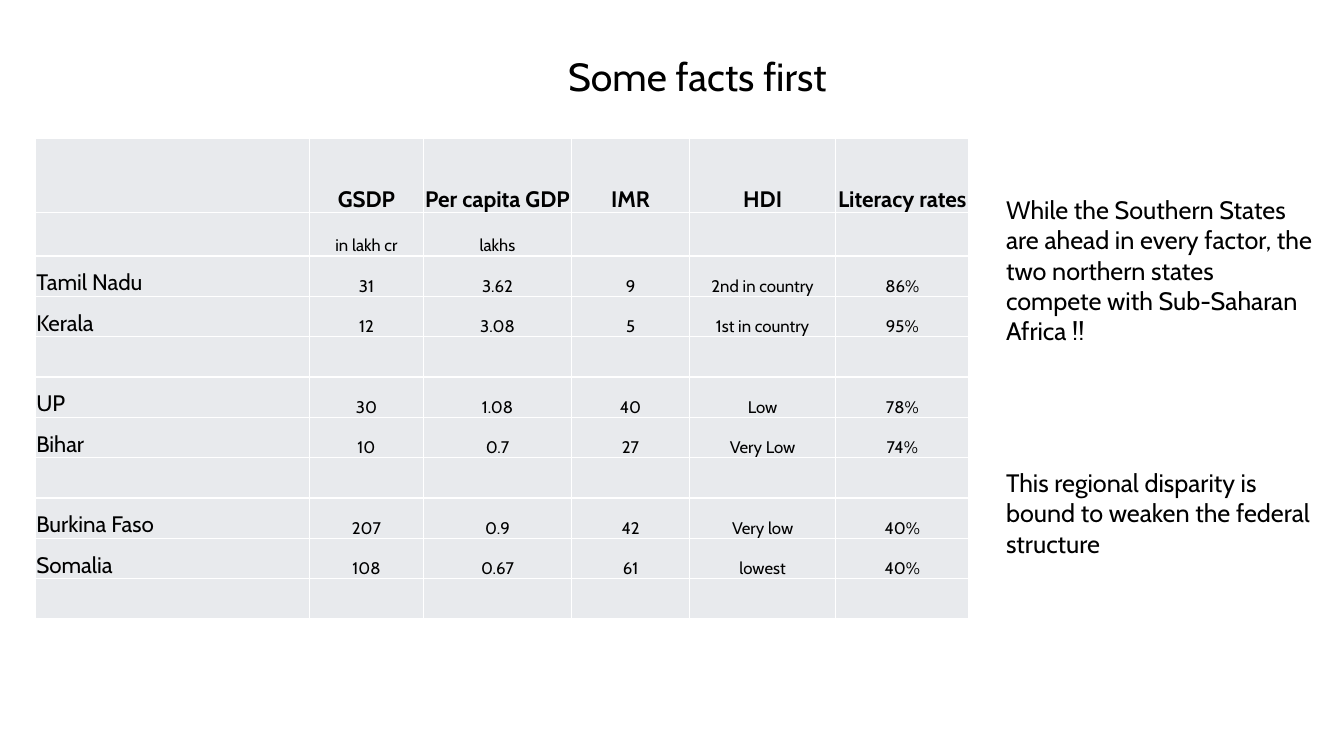
import pptx
import pptx.dml.color
import pptx.enum.text
import pptx.oxml
import pptx.oxml.ns
import pptx.util
from pptx.util import Inches

BLACK = pptx.dml.color.RGBColor(0x00, 0x00, 0x00)
WHITE = pptx.dml.color.RGBColor(0xFF, 0xFF, 0xFF)
PALE_GREY = pptx.dml.color.RGBColor(0xE8, 0xEA, 0xED)

ALIGN = pptx.enum.text.PP_ALIGN
ANCHOR = pptx.enum.text.MSO_ANCHOR

COLUMN_WIDTHS = [2.72, 1.13, 1.47, 1.17, 1.45, 1.32]
ROW_HEIGHTS = [0.74, 0.43] + [0.4] * 9
BLANK_ROW = [""] * 6
FACTS = [
    ["", "GSDP", "Per capita GDP", "IMR", "HDI", "Literacy rates"],
    ["", "in lakh cr", "lakhs", "", "", ""],
    ["Tamil Nadu", "31", "3.62", "9", "2nd in country", "86%"],
    ["Kerala", "12", "3.08", "5", "1st in country", "95%"],
    BLANK_ROW,
    ["UP", "30", "1.08", "40", "Low", "78%"],
    ["Bihar", "10", "0.7", "27", "Very Low", "74%"],
    BLANK_ROW,
    ["Burkina Faso", "207", "0.9", "42", "Very low", "40%"],
    ["Somalia", "108", "0.67", "61", "lowest", "40%"],
    BLANK_ROW,
]
REMARKS = [
    "While the Southern States are ahead in every factor, the two northern "
    "states compete with Sub-Saharan Africa !!",
    "This regional disparity is bound to weaken the federal structure",
]


class FactSlide:
    font_name = "Cabin"
    text_color = BLACK
    cell_color = PALE_GREY
    border_color = WHITE
    border_width = pptx.util.Pt(1)

    def __init__(self, slide):
        self.slide = slide

    def add_run(self, paragraph, text, size, bold=False):
        run = paragraph.add_run()
        run.text = text
        run.font.name = self.font_name
        run.font.size = pptx.util.Pt(size)
        run.font.bold = bold
        run.font.color.rgb = self.text_color

    def add_title(self, text, left, top, width, height):
        title = self.slide.shapes.title
        title.left, title.top = Inches(left), Inches(top)
        title.width, title.height = Inches(width), Inches(height)
        title.text_frame.word_wrap = True
        title.text_frame.auto_size = pptx.enum.text.MSO_AUTO_SIZE.NONE
        title.text_frame.vertical_anchor = ANCHOR.TOP
        paragraph = title.text_frame.paragraphs[0]
        paragraph.alignment = ALIGN.CENTER
        paragraph.line_spacing = 1.0
        self.add_run(paragraph, text, 28)

    def add_remarks(self, remarks, left, top, width, height, gap):
        """Add a text box with a gap, in points, between its paragraphs."""
        shape = self.slide.shapes.add_textbox(
            Inches(left), Inches(top), Inches(width), Inches(height))
        frame = shape.text_frame
        frame.word_wrap = True
        for index, remark in enumerate(remarks):
            paragraph = frame.add_paragraph() if index else frame.paragraphs[0]
            if index:
                paragraph.space_before = pptx.util.Pt(gap)
            self.add_run(paragraph, remark, 18)

    def add_table(self, rows, left, top):
        shape = self.slide.shapes.add_table(
            len(rows), len(COLUMN_WIDTHS), Inches(left), Inches(top),
            Inches(sum(COLUMN_WIDTHS)), Inches(sum(ROW_HEIGHTS)))
        table = shape.table
        for column, width in zip(table.columns, COLUMN_WIDTHS):
            column.width = Inches(width)
        for row, height in zip(table.rows, ROW_HEIGHTS):
            row.height = Inches(height)
        for row_index, texts in enumerate(rows):
            for column_index, text in enumerate(texts):
                cell = table.cell(row_index, column_index)
                self.format_cell(cell)
                if not text:
                    continue
                is_header, is_state = row_index == 0, column_index == 0
                paragraph = cell.text_frame.paragraphs[0]
                paragraph.alignment = ALIGN.LEFT if is_state else ALIGN.CENTER
                size = 16 if is_header or is_state else 12
                self.add_run(paragraph, text, size, is_header)

    def format_cell(self, cell):
        cell.margin_left = cell.margin_right = cell.margin_top = Inches(0.01)
        cell.margin_bottom = 0
        cell.vertical_anchor = ANCHOR.BOTTOM
        cell.fill.solid()
        cell.fill.fore_color.rgb = self.cell_color
        properties = cell._tc.get_or_add_tcPr()
        for position, side in enumerate(["lnL", "lnR", "lnT", "lnB"]):
            properties.insert(position, pptx.oxml.parse_xml(
                f'<a:{side} {pptx.oxml.ns.nsdecls("a")} w="{self.border_width}">'
                f'<a:solidFill><a:srgbClr val="{self.border_color}"/></a:solidFill>'
                f'</a:{side}>'))


def main():
    presentation = pptx.Presentation()
    presentation.slide_width = Inches(13.33)
    presentation.slide_height = Inches(7.5)
    title_only = presentation.slide_layouts[5]
    fact_slide = FactSlide(presentation.slides.add_slide(title_only))
    fact_slide.add_title("Some facts first", 1.62, 0.47, 10.59, 0.88)
    fact_slide.add_table(FACTS, 0.35, 1.37)
    fact_slide.add_remarks(REMARKS, 9.88, 1.88, 3.25, 3.74, gap=87)
    presentation.save("out.pptx")


if __name__ == "__main__":
    main()
